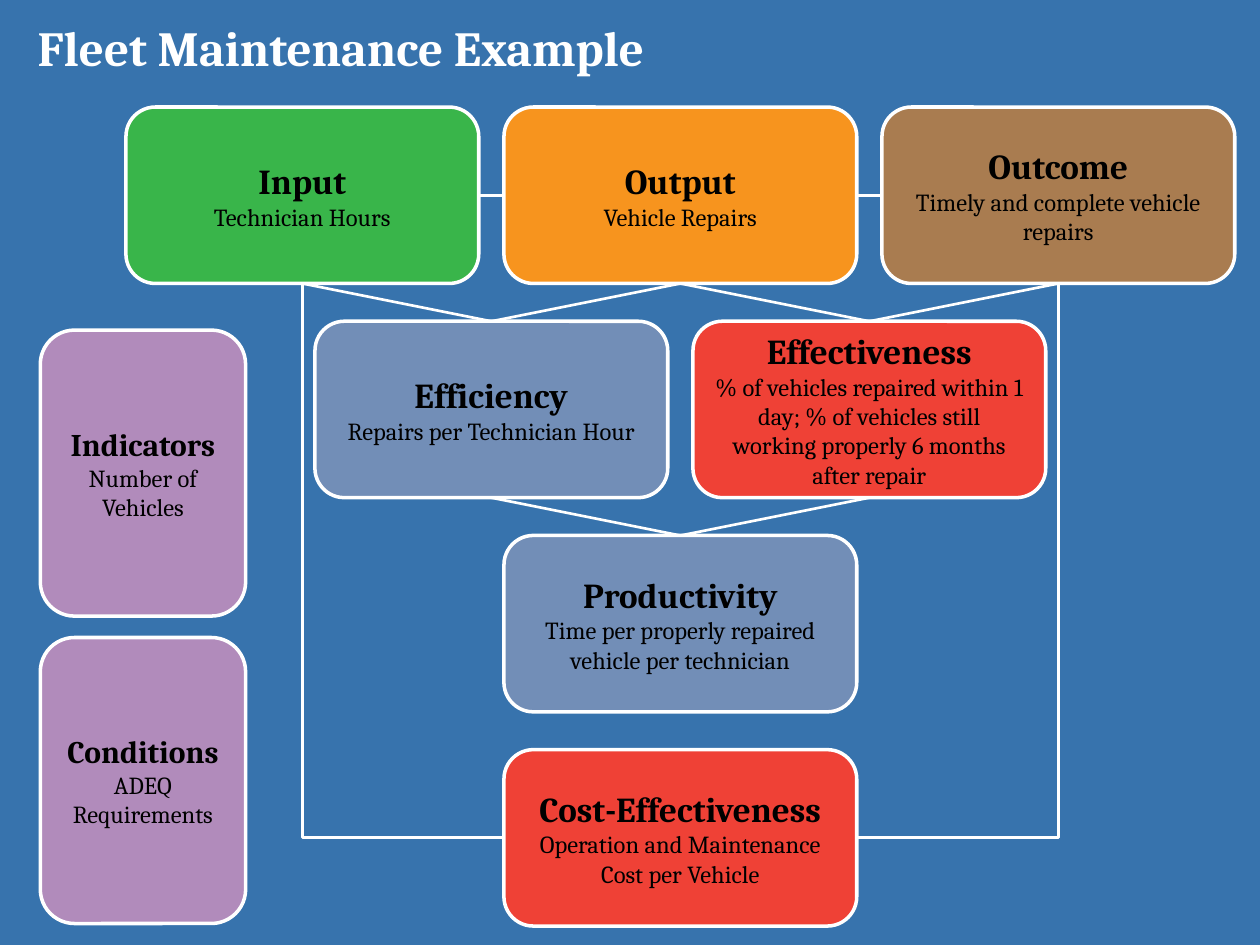
from lxml.etree import SubElement
from pptx import Presentation
from pptx.dml.color import RGBColor
from pptx.enum.shapes import MSO_CONNECTOR, MSO_SHAPE
from pptx.enum.text import MSO_ANCHOR, PP_ALIGN
from pptx.oxml.ns import qn
from pptx.util import Pt

COLORS = {
    "background": "3773AD", "white": "FFFFFF", "black": "000000",
    "green": "39B54A", "orange": "F7941E", "brown": "A97C50",
    "blue": "728EB7", "red": "EF4136", "purple": "B18BBB",
}
FONT = "Cambria"
TITLE = "Fleet Maintenance Example"

# heading, detail, fill, half-column, row
MEASURES = [
    ("Input", "Technician Hours", "green", 0, 0),
    ("Output", "Vehicle Repairs", "orange", 2, 0),
    ("Outcome", "Timely and complete vehicle repairs", "brown", 4, 0),
    ("Efficiency", "Repairs per Technician Hour", "blue", 1, 1),
    ("Productivity", "Time per properly repaired vehicle per technician", "blue", 2, 2),
    ("Effectiveness", "% of vehicles repaired within 1 day; % of vehicles still "
     "working properly 6 months after repair", "red", 3, 1),
    ("Cost-Effectiveness", "Operation and Maintenance Cost per Vehicle", "red", 2, 3),
]
CONTEXT = [("Indicators", "Number of Vehicles"), ("Conditions", "ADEQ Requirements")]

# Connection sites of a rounded rectangle
TOP, LEFT, BOTTOM, RIGHT = range(4)
LINKS = [
    ("Input", BOTTOM, "Efficiency", TOP),
    ("Efficiency", TOP, "Output", BOTTOM),
    ("Output", BOTTOM, "Effectiveness", TOP),
    ("Effectiveness", TOP, "Outcome", BOTTOM),
    ("Efficiency", BOTTOM, "Productivity", TOP),
    ("Productivity", TOP, "Effectiveness", BOTTOM),
    ("Cost-Effectiveness", RIGHT, "Outcome", BOTTOM),
    ("Cost-Effectiveness", LEFT, "Input", BOTTOM),
    ("Input", RIGHT, "Output", LEFT),
    ("Output", RIGHT, "Outcome", LEFT),
]

GRID_LEFT, GRID_TOP = 72, 61.2
HALF_COLUMN, ROW_STEP = 108, 122.4
MEASURE_SIZE = (201.6, 100.8)
CONTEXT_LEFT, CONTEXT_TOP, CONTEXT_STEP = 23.04, 188.64, 175.68
CONTEXT_SIZE = (117.36, 163.44)


def color(name):
    return RGBColor.from_string(COLORS[name])


def add_text(para, text, color_name, **font_values):
    span = para.add_run()
    span.text = text
    span.font.color.rgb = color(color_name)
    for name, value in {"name": FONT, **font_values}.items():
        setattr(span.font, name, value)


def set_line(shape, width):
    shape.line.color.rgb = color("white")
    shape.line.width = Pt(width)


def add_box(page, heading, detail, fill, place, heading_size):
    box = page.shapes.add_shape(MSO_SHAPE.ROUNDED_RECTANGLE, *map(Pt, place))
    box.shadow.inherit = False
    box.fill.solid()
    box.fill.fore_color.rgb = color(fill)
    set_line(box, 2)
    frame = box.text_frame
    frame.word_wrap = True
    frame.vertical_anchor = MSO_ANCHOR.MIDDLE
    lines = [(heading, heading_size, True), (detail, 14, False)]
    for index, (text, size, bold) in enumerate(lines):
        para = frame.add_paragraph() if index else frame.paragraphs[0]
        para.alignment = PP_ALIGN.CENTER
        add_text(para, text, "black", size=Pt(size), bold=bold)
    return box


def add_link(page, start, start_site, end, end_site):
    """Join two boxes; a side-to-bottom link turns one corner."""
    has_corner = start_site in (LEFT, RIGHT) and end_site == BOTTOM
    kind = MSO_CONNECTOR.ELBOW if has_corner else MSO_CONNECTOR.STRAIGHT
    link = page.shapes.add_connector(kind, 0, 0, 0, 0)
    link.begin_connect(start, start_site)
    link.end_connect(end, end_site)
    set_line(link, 1.5)
    properties = link.element.spPr
    if has_corner:
        properties.find(qn("a:prstGeom")).set("prst", "bentConnector2")
    SubElement(properties, qn("a:effectLst"))


def main():
    deck = Presentation()
    deck.slide_width, deck.slide_height = Pt(720), Pt(540)
    page = deck.slides.add_slide(deck.slide_layouts[6])
    page.background.fill.solid()
    page.background.fill.fore_color.rgb = color("background")

    boxes = {}
    for heading, detail, fill, column, row in MEASURES:
        place = (GRID_LEFT + column * HALF_COLUMN, GRID_TOP + row * ROW_STEP, *MEASURE_SIZE)
        boxes[heading] = add_box(page, heading, detail, fill, place, 20)

    title = page.shapes.add_textbox(Pt(14.4), Pt(0), Pt(648), Pt(54))
    title.text_frame.word_wrap = True
    title.text_frame.vertical_anchor = MSO_ANCHOR.MIDDLE
    add_text(title.text_frame.paragraphs[0], TITLE, "white", size=Pt(28), bold=True)

    for start, start_site, end, end_site in LINKS:
        add_link(page, boxes[start], start_site, boxes[end], end_site)

    for index, (heading, detail) in enumerate(CONTEXT):
        place = (CONTEXT_LEFT, CONTEXT_TOP + index * CONTEXT_STEP, *CONTEXT_SIZE)
        add_box(page, heading, detail, "purple", place, 18)

    deck.save("out.pptx")


if __name__ == "__main__":
    main()
